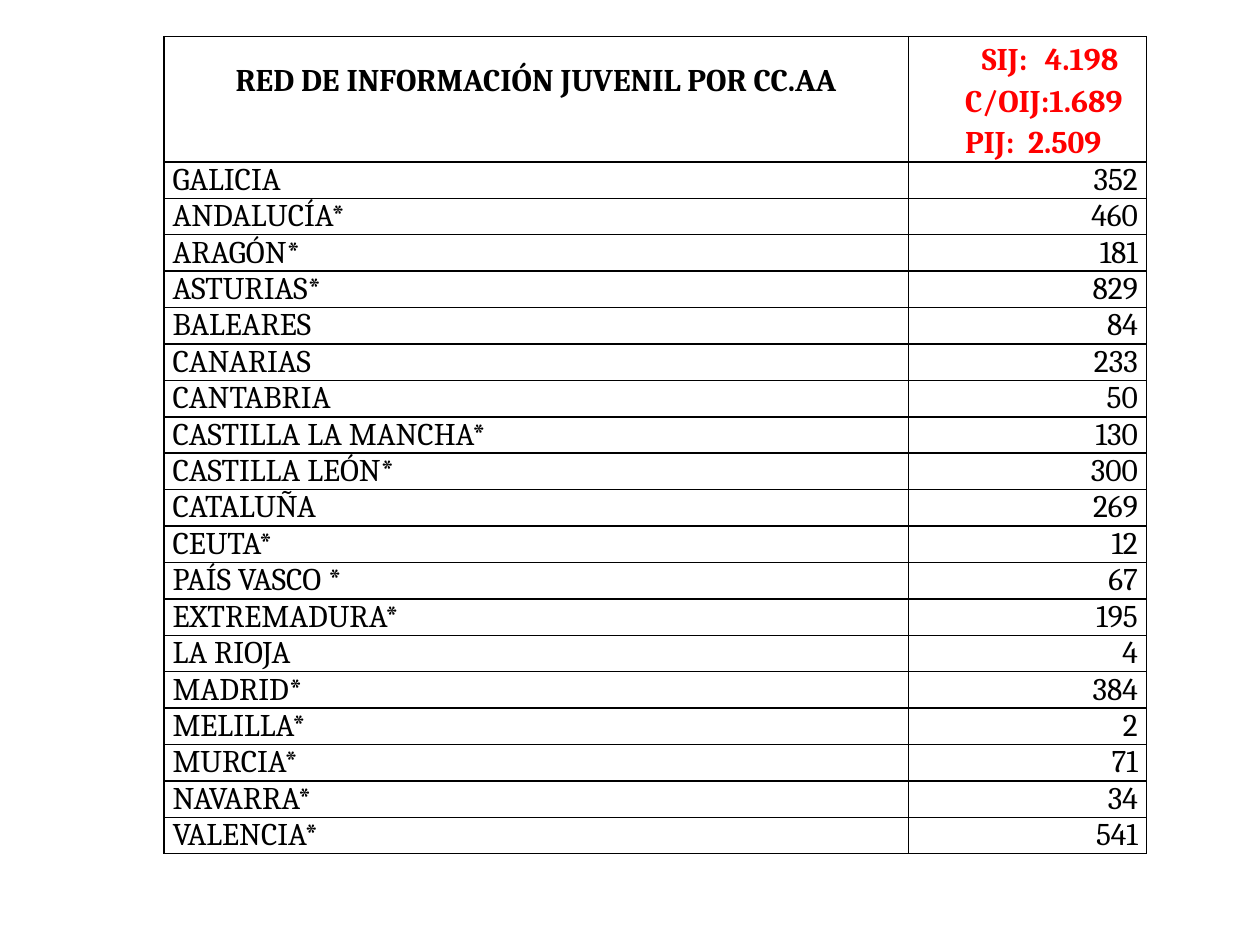
import pptx
import pptx.util
import pptx.dml.color
import pptx.enum.text
import pptx.oxml
import pptx.oxml.ns

Pt = pptx.util.Pt
Rgb = pptx.dml.color.RGBColor.from_string
Align = pptx.enum.text.PP_ALIGN
Anchor = pptx.enum.text.MSO_ANCHOR
theme = {"font": "Cambria", "size": 18, "ink": "000000", "red": "FF0000", "rule": 1}

totals = [("SIJ:\t4.198", 37, 83), ("C/OIJ:1.689", 27.4, None), ("PIJ:\t2.509", 27.4, 75.4)]
regions = [
    ("GALICIA", 352), ("ANDALUCÍA*", 460), ("ARAGÓN*", 181), ("ASTURIAS*", 829),
    ("BALEARES", 84), ("CANARIAS", 233), ("CANTABRIA", 50),
    ("CASTILLA LA MANCHA*", 130), ("CASTILLA LEÓN*", 300), ("CATALUÑA", 269),
    ("CEUTA*", 12), ("PAÍS VASCO *", 67), ("EXTREMADURA*", 195), ("LA RIOJA", 4),
    ("MADRID*", 384), ("MELILLA*", 2), ("MURCIA*", 71), ("NAVARRA*", 34),
    ("VALENCIA*", 541),
]


def write(para, text, align, color="ink", bold=False):
    para.alignment = align
    run = para.add_run()
    run.text = text
    style = {"name": theme["font"], "size": Pt(theme["size"]), "bold": bold}
    for key, value in style.items():
        setattr(run.font, key, value)
    run.font.color.rgb = Rgb(theme[color])


def frame(cell):
    look = {"margin_left": Pt(5), "margin_right": Pt(5),
            "margin_top": Pt(0), "margin_bottom": Pt(0)}
    for key, value in look.items():
        setattr(cell, key, value)
    props = cell._tc.get_or_add_tcPr()
    for side in ("lnL", "lnR", "lnT", "lnB"):
        props.append(pptx.oxml.parse_xml(
            f'<a:{side} {pptx.oxml.ns.nsdecls("a")} w="{Pt(theme["rule"])}"><a:solidFill>'
            f'<a:srgbClr val="{theme["ink"]}"/></a:solidFill></a:{side}>'))
    cell.fill.background()


# Slide
deck = pptx.Presentation()
deck.slide_width, deck.slide_height = Pt(720), Pt(540)
slide = deck.slides.add_slide(deck.slide_layouts[6])

# Table grid
head, row = 54, 20.2
count = len(regions) + 1
table = slide.shapes.add_table(count, 2, Pt(93.6), Pt(20.9), Pt(561.6),
                               Pt(head + row * len(regions))).table
for key in ("first_row", "horz_banding"):
    setattr(table, key, False)
for col, width in zip(table.columns, (425.5, 136.1)):
    col.width = Pt(width)
for num, line in enumerate(table.rows):
    line.height = Pt(row if num else head)
for cell in table.iter_cells():
    frame(cell)

# Heading cell, raised by one line
title, sums = table.cell(0, 0), table.cell(0, 1)
title.vertical_anchor = sums.vertical_anchor = Anchor.MIDDLE
title.margin_bottom = Pt(21)
write(title.text_frame.paragraphs[0], "RED DE INFORMACIÓN JUVENIL POR CC.AA",
      Align.CENTER, bold=True)

# Totals, set with indents and tab stops
for num, (text, indent, stop) in enumerate(totals):
    body = sums.text_frame
    para = body.add_paragraph() if num else body.paragraphs[0]
    write(para, text, Align.LEFT, "red", True)
    para.line_spacing = 1.15
    props = para._p.get_or_add_pPr()
    props.set("marL", str(Pt(indent)))
    props.set("indent", "0")
    if stop:
        props.append(pptx.oxml.parse_xml(
            f'<a:tabLst {pptx.oxml.ns.nsdecls("a")}>'
            f'<a:tab pos="{Pt(stop)}" algn="l"/></a:tabLst>'))

# Regions
for num, (name, value) in enumerate(regions, 1):
    write(table.cell(num, 0).text_frame.paragraphs[0], name, Align.LEFT)
    write(table.cell(num, 1).text_frame.paragraphs[0], str(value), Align.RIGHT)

deck.save("out.pptx")
